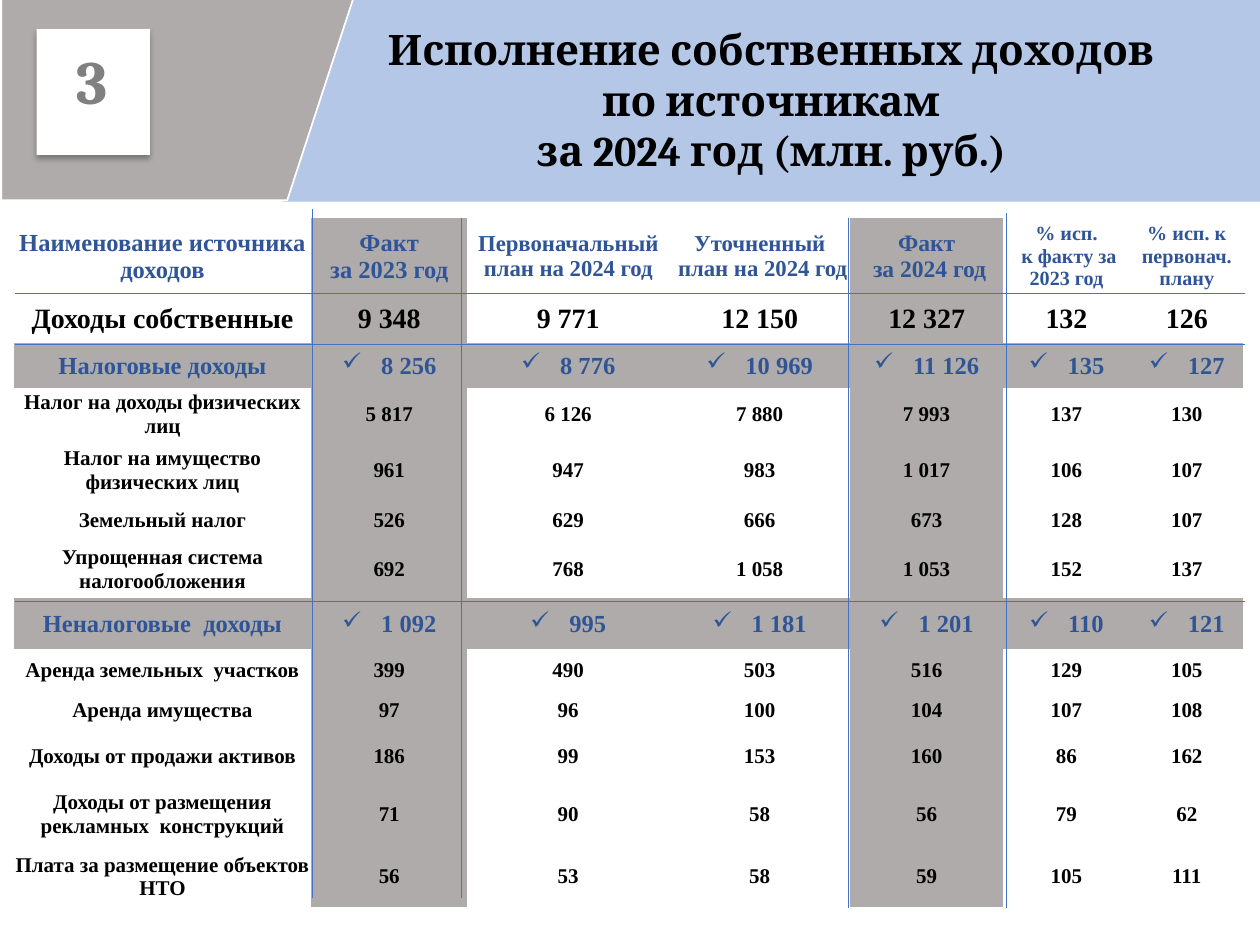
import pptx
import pptx.dml.color
import pptx.enum.shapes
import pptx.enum.text
import pptx.oxml
import pptx.oxml.ns
import pptx.util
from lxml import etree

Inches = pptx.util.Inches
Pt = pptx.util.Pt
qn = pptx.oxml.ns.qn

GREY = "AFABAB"
WHITE = "FFFFFF"
BLACK = "000000"
NAVY = "2F5597"
LINE_BLUE = "4472C4"
NO_GRID_STYLE = "{2D5ABB26-0587-4C30-8999-92F81FD0307C}"

COLUMN_WIDTHS = [2.36, 1.24, 1.6, 1.44, 1.21, 1.01, 0.9]
ROW_HEIGHTS = [0.6, 0.39, 0.36, 0.41, 0.48, 0.31, 0.47, 0.4, 0.33, 0.31, 0.42, 0.5, 0.49]
HEADER_SIZES = [14, 14, 13, 13, 13.5, 11.5, 11.5]
FACT_COLUMNS = (1, 4)
TOTAL_ROW = 1
GROUP_ROWS = (2, 7)
UNFILLED_ROWS = range(3, 7)

INCOME = [
    ["Наименование источника доходов", "Факт\nза 2023 год", "Первоначальный план на 2024 год",
     "Уточненный\n план на 2024 год", "Факт\n за 2024 год", "% исп.\n к факту за 2023 год",
     "% исп. к первонач.\nплану"],
    ["Доходы собственные", "9 348", "9 771", "12 150", "12 327", "132", "126"],
    ["Налоговые доходы", "8 256", "8 776", "10 969", "11 126", "135", "127"],
    ["Налог на доходы физических лиц", "5 817", "6 126", "7 880", "7 993", "137", "130"],
    ["Налог на имущество физических лиц", "961", "947", "983", "1 017", "106", "107"],
    ["Земельный налог", "526", "629", "666", "673", "128", "107"],
    ["Упрощенная система налогообложения", "692", "768", "1 058", "1 053", "152", "137"],
    ["Неналоговые  доходы", "1 092", "995", "1 181", "1 201", "110", "121"],
    ["Аренда земельных  участков", "399", "490", "503", "516", "129", "105"],
    ["Аренда имущества", "97", "96", "100", "104", "107", "108"],
    ["Доходы от продажи активов", "186", "99", "153", "160", "86", "162"],
    ["Доходы от размещения рекламных  конструкций", "71", "90", "58", "56", "79", "62"],
    ["Плата за размещение объектов НТО", "56", "53", "58", "59", "105", "111"],
]


def color(value):
    return pptx.dml.color.RGBColor.from_string(value)


def fill_solid(target, value):
    target.fill.solid()
    target.fill.fore_color.rgb = color(value)


def write_text(frame, text, size=12, font="Times New Roman", text_color=BLACK,
               align=pptx.enum.text.PP_ALIGN.CENTER, bullet=None):
    for index, line in enumerate(text.split("\n")):
        paragraph = frame.paragraphs[0] if index == 0 else frame.add_paragraph()
        paragraph.text = line
        paragraph.alignment = align
        paragraph.line_spacing = 1.0
        paragraph.space_before = Pt(0)
        for run in paragraph.runs:
            run.font.size = Pt(size)
            run.font.name = font
            run.font.bold = True
            run.font.color.rgb = color(text_color)
        if bullet:
            properties = paragraph.runs[0].font._element.getparent().getparent().get_or_add_pPr()
            properties.set("marL", str(Inches(0.31)))
            properties.set("indent", str(Inches(-0.31)))
            etree.SubElement(properties, qn("a:buChar")).set("char", bullet)


class SlideBuilder:
    def __init__(self, presentation):
        self.slide = presentation.slides.add_slide(presentation.slide_layouts[5])
        self.heading_font = "Cambria"

    def title(self, text, left, top, width, height, fill):
        shape = self.slide.shapes.title
        shape.left, shape.top = Inches(left), Inches(top)
        shape.width, shape.height = Inches(width), Inches(height)
        fill_solid(shape, fill)
        frame = shape.text_frame
        frame.auto_size = pptx.enum.text.MSO_AUTO_SIZE.NONE
        frame.vertical_anchor = pptx.enum.text.MSO_ANCHOR.MIDDLE
        write_text(frame, text, size=24, font=self.heading_font)

    def polygon(self, points, fill):
        corners = [(Inches(x), Inches(y)) for x, y in points]
        builder = self.slide.shapes.build_freeform(*corners[0])
        builder.add_line_segments(corners[1:], close=True)
        shape = builder.convert_to_shape()
        shape.shadow.inherit = False
        fill_solid(shape, fill)
        shape.line.color.rgb = color(WHITE)
        shape.line.width = Pt(1)

    def table(self, left, top):
        graphic_frame = self.slide.shapes.add_table(
            len(INCOME), len(COLUMN_WIDTHS), Inches(left), Inches(top),
            Inches(sum(COLUMN_WIDTHS)), Inches(sum(ROW_HEIGHTS)))
        table = graphic_frame.table
        table.first_row = False
        table.horz_banding = False
        for style in graphic_frame._element.iter(qn("a:tableStyleId")):
            style.text = NO_GRID_STYLE
        for column, width in zip(table.columns, COLUMN_WIDTHS):
            column.width = Inches(width)
        for row, height in zip(table.rows, ROW_HEIGHTS):
            row.height = Inches(height)
        for row_index, values in enumerate(INCOME):
            for column_index, value in enumerate(values):
                self.cell(table.cell(row_index, column_index), row_index, column_index, value)

    def cell(self, cell, row_index, column_index, value):
        cell.margin_left = cell.margin_right = cell.margin_top = Inches(0.01)
        cell.margin_bottom = 0
        cell.vertical_anchor = pptx.enum.text.MSO_ANCHOR.MIDDLE
        if column_index in FACT_COLUMNS or row_index in GROUP_ROWS:
            fill_solid(cell, GREY)
        elif row_index in UNFILLED_ROWS:
            cell.fill.background()
        else:
            fill_solid(cell, WHITE)
        text_format = {}
        if row_index == 0:
            text_format = {"size": HEADER_SIZES[column_index], "text_color": NAVY}
        elif row_index == TOTAL_ROW:
            text_format = {"size": 16}
        elif row_index in GROUP_ROWS:
            text_format = {"size": 14, "text_color": NAVY, "bullet": "✓" if column_index else None}
        write_text(cell.text_frame, value, **text_format)

    def line(self, start_x, start_y, end_x, end_y):
        connector = self.slide.shapes.add_connector(
            pptx.enum.shapes.MSO_CONNECTOR.STRAIGHT,
            Inches(start_x), Inches(start_y), Inches(end_x), Inches(end_y))
        connector.line.color.rgb = color(LINE_BLUE)
        connector.line.width = Pt(0.5)
        etree.SubElement(connector._element.spPr, qn("a:effectLst"))

    def card(self, left, top, width, height):
        shape = self.slide.shapes.add_shape(
            pptx.enum.shapes.MSO_SHAPE.RECTANGLE,
            Inches(left), Inches(top), Inches(width), Inches(height))
        shape.shadow.inherit = False
        fill_solid(shape, WHITE)
        shape.line.fill.background()
        effects = shape._element.spPr.find(qn("a:effectLst"))
        shadow = etree.SubElement(effects, qn("a:outerShdw"), blurRad=str(Pt(3.5)),
                                  dist=str(Pt(2.2)), dir="5400000", rotWithShape="0")
        shade = etree.SubElement(shadow, qn("a:srgbClr"), val=BLACK)
        etree.SubElement(shade, qn("a:alpha"), val="32000")

    def label(self, text, left, top, width, height, **text_format):
        box = self.slide.shapes.add_textbox(Inches(left), Inches(top), Inches(width), Inches(height))
        box.text_frame.word_wrap = True
        box.text_frame.auto_size = pptx.enum.text.MSO_AUTO_SIZE.SHAPE_TO_FIT_TEXT
        write_text(box.text_frame, text, font=self.heading_font, **text_format)


def main():
    presentation = pptx.Presentation()
    presentation.slide_width = Inches(10)
    presentation.slide_height = Inches(7.5)
    builder = SlideBuilder(presentation)
    builder.title("Исполнение собственных доходов\nпо источникам\vза 2024 год (млн. руб.)",
                  2.24, -0.02, 7.76, 1.62, "B4C7E7")
    builder.polygon([(0.01, 1.59), (0.01, -0.02), (2.81, -0.03), (2.28, 1.59)], GREY)
    builder.table(0.11, 1.73)
    for y in (2.33, 2.73, 4.77):
        builder.line(0.12, y, 9.88, y)
    for x, top, bottom in ((6.73, 1.73, 7.21), (7.99, 1.69, 7.21),
                           (3.66, 1.73, 7.13), (2.48, 1.66, 7.13)):
        builder.line(x, top, x, bottom)
    builder.card(0.29, 0.23, 0.9, 1)
    builder.label("3", 0.51, 0.29, 0.55, 0.69, size=35, text_color="808080",
                  align=pptx.enum.text.PP_ALIGN.LEFT)
    presentation.save("out.pptx")


if __name__ == "__main__":
    main()
